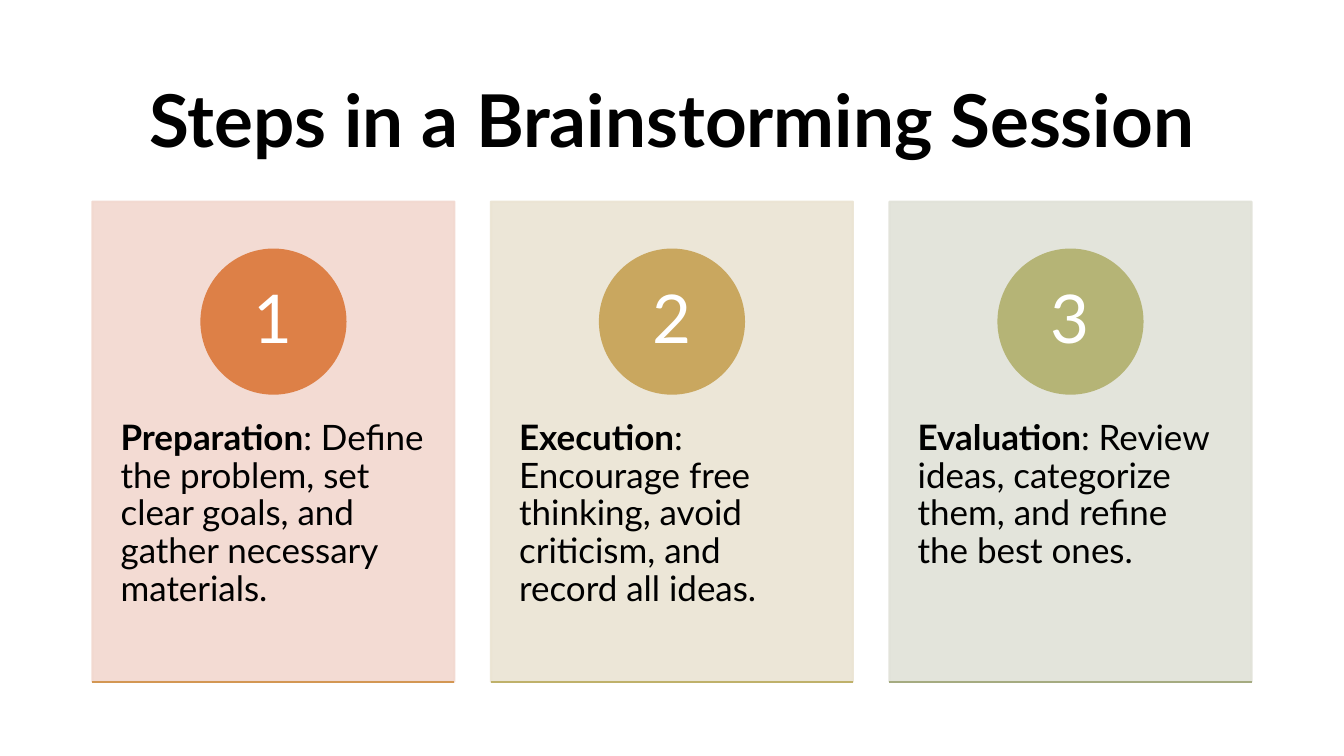
"""Build the slide on the three steps of a brainstorming session."""
from dataclasses import dataclass

from lxml import etree
from pptx import Presentation
from pptx import util as u
from pptx.dml.color import RGBColor
from pptx.enum import shapes, text
from pptx.oxml.ns import qn


@dataclass(frozen=True)
class Theme:
    """Hold the colours and type sizes of the slide."""
    font: str = "Lato"
    ink: str = "000000"
    on_disc: str = "FFFFFF"
    title_size: int = 52
    number_size: int = 48
    body_size: int = 25
    line_width: float = 1.5
    line_spacing: float = 0.9
    card_alpha: int = 90
    cards: tuple = ("F2D8CF", "EBE4D3", "E1E2D8")
    discs: tuple = ("DD8047", "C9A75F", "B5B476")
    rules: tuple = ("D39753", "BFB16A", "A5AB81")


@dataclass(frozen=True)
class Box:
    """Describe a region in centimetres."""
    left: float
    top: float
    width: float
    height: float

    def lengths(self):
        """Return the region as slide lengths."""
        return [u.Cm(side) for side in (self.left, self.top, self.width, self.height)]


THEME = Theme()
STEPS = (
    ("Preparation", ": Define the problem, set clear goals, and gather necessary materials."),
    ("Execution", ": Encourage free thinking, avoid criticism, and record all ideas."),
    ("Evaluation", ": Review ideas, categorize them, and refine the best ones."),
)


def add_run(paragraph, words, size, color, bold=False):
    """Append one formatted run to a paragraph."""
    run = paragraph.add_run()
    run.text = words
    run.font.name = THEME.font
    run.font.size = u.Pt(size)
    run.font.bold = bold
    run.font.color.rgb = RGBColor.from_string(color)


def prepare_text(frame, anchor, align, inset_x, inset_y):
    """Set up a text frame and return its first paragraph."""
    frame.word_wrap = True
    frame.auto_size = text.MSO_AUTO_SIZE.NONE
    frame.vertical_anchor = anchor
    frame.margin_left = frame.margin_right = u.Cm(inset_x)
    frame.margin_top = frame.margin_bottom = u.Cm(inset_y)
    paragraph = frame.paragraphs[0]
    paragraph.alignment = align
    paragraph.line_spacing = THEME.line_spacing
    return paragraph


def add_panel(slide, preset, box, color, alpha=100):
    """Add a preset shape whose fill and outline share one colour."""
    panel = slide.shapes.add_shape(preset, *box.lengths())
    panel.shadow.inherit = False
    panel.line.width = u.Pt(THEME.line_width)
    panel.fill.solid()
    panel.line.fill.solid()
    for paint in (panel.fill, panel.line.fill):
        paint.fore_color.rgb = RGBColor.from_string(color)
    if alpha < 100:
        for tint in panel.element.spPr.iter(qn("a:srgbClr")):
            etree.SubElement(tint, qn("a:alpha"), val=str(alpha * 1000))
    return panel


def add_title(slide, box):
    """Place and format the slide title."""
    title = slide.shapes.title
    title.left, title.top, title.width, title.height = box.lengths()
    heading = prepare_text(title.text_frame, text.MSO_ANCHOR.MIDDLE,
                           text.PP_ALIGN.CENTER, 0.25, 0.13)
    add_run(heading, "Steps in a Brainstorming Session", THEME.title_size, THEME.ink, True)


def add_base_rule(slide, box, color):
    """Draw the coloured rule along the bottom edge of a card."""
    bottom = u.Cm(box.top + box.height)
    rule = slide.shapes.add_connector(shapes.MSO_CONNECTOR.STRAIGHT, u.Cm(box.left), bottom,
                                      u.Cm(box.left + box.width), bottom)
    rule.line.color.rgb = RGBColor.from_string(color)
    rule.line.width = u.Pt(THEME.line_width)
    etree.SubElement(rule.element.spPr, qn("a:effectLst"))


def add_step(slide, box, index):
    """Draw one step card with its number, wording and base rule."""
    add_panel(slide, shapes.MSO_SHAPE.RECTANGLE, box, THEME.cards[index], THEME.card_alpha)

    name, details = STEPS[index]
    wording_box = Box(box.left, box.top + 0.38 * box.height, box.width, 0.6 * box.height)
    wording = slide.shapes.add_textbox(*wording_box.lengths())
    sentence = prepare_text(wording.text_frame, text.MSO_ANCHOR.TOP,
                            text.PP_ALIGN.LEFT, 0.71, 0.91)
    add_run(sentence, name, THEME.body_size, THEME.ink, True)
    add_run(sentence, details, THEME.body_size, THEME.ink)

    diameter = 0.3 * box.height
    disc_box = Box(box.left + (box.width - diameter) / 2, box.top + 0.1 * box.height,
                   diameter, diameter)
    disc = add_panel(slide, shapes.MSO_SHAPE.OVAL, disc_box, THEME.discs[index])
    number = prepare_text(disc.text_frame, text.MSO_ANCHOR.MIDDLE,
                          text.PP_ALIGN.CENTER, 0.28, 0.03)
    add_run(number, str(index + 1), THEME.number_size, THEME.on_disc)

    add_base_rule(slide, box, THEME.rules[index])


def add_steps(slide, box, gap):
    """Spread the step cards evenly across a region."""
    width = (box.width - gap * (len(STEPS) - 1)) / len(STEPS)
    for index in range(len(STEPS)):
        add_step(slide, Box(box.left + index * (width + gap), box.top, width, box.height), index)


def main():
    """Build and save the presentation."""
    deck = Presentation()
    deck.slide_width, deck.slide_height = u.Cm(33.87), u.Cm(19.05)
    slide = deck.slides.add_slide(deck.slide_layouts[5])
    add_title(slide, Box(2.33, 1.55, 29.21, 3.15))
    add_steps(slide, Box(2.33, 5.08, 29.21, 12.1), gap=0.92)
    deck.save("out.pptx")


if __name__ == "__main__":
    main()
